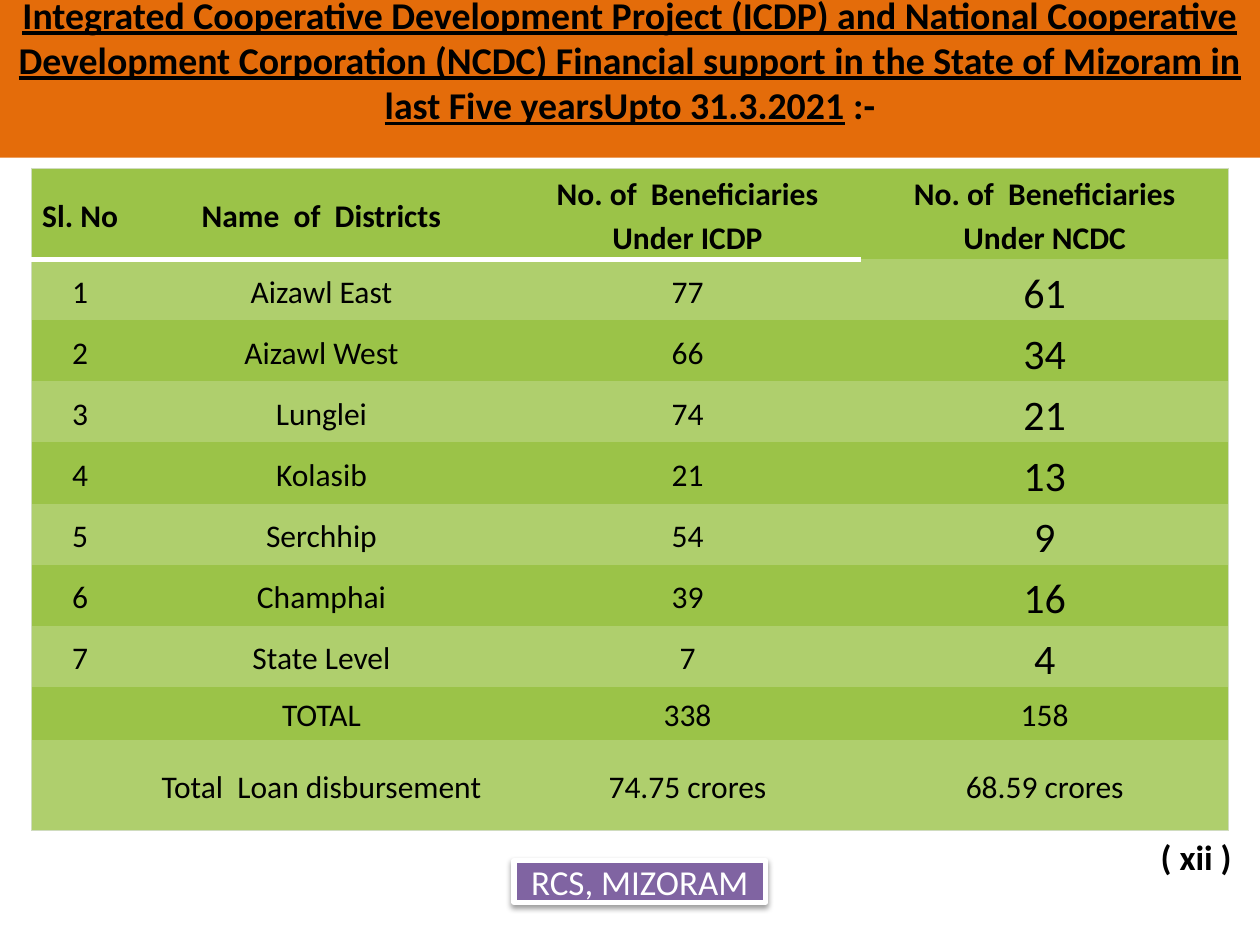
from lxml import etree
from pptx import Presentation
from pptx.dml.color import RGBColor
from pptx.enum.shapes import MSO_SHAPE
from pptx.enum.text import MSO_ANCHOR, MSO_AUTO_SIZE, PP_ALIGN
from pptx.oxml import parse_xml
from pptx.oxml.ns import nsdecls, qn
from pptx.util import Cm, Pt

MIDDLE = MSO_ANCHOR.MIDDLE
CENTER = PP_ALIGN.CENTER
RECTANGLE = MSO_SHAPE.RECTANGLE
NO_AUTOFIT = MSO_AUTO_SIZE.NONE

FONT = "Calibri"
BLACK, WHITE = "000000", "FFFFFF"
ORANGE, PURPLE = "E46C0A", "8064A2"
GREEN, LIGHT_GREEN, EDGE = "9BC348", "AFCF6D", "D0DCBF"
NO_STYLE = "{2D5ABB26-0587-4C30-8999-92F81FD0307C}"


def style_runs(para, size, color=BLACK, bold=False):
    for span in para.runs:
        span.font.name = FONT
        span.font.size = Pt(size)
        span.font.bold = bold
        span.font.color.rgb = RGBColor.from_string(color)


def add_border(cell, side, color, width):
    """Side is L, R, T or B, added in that order and before the fill."""
    line = etree.SubElement(cell._tc.get_or_add_tcPr(), qn(f"a:ln{side}"), w=str(Pt(width)))
    fill = etree.SubElement(line, qn("a:solidFill"))
    etree.SubElement(fill, qn("a:srgbClr"), val=color)


deck = Presentation()
deck.slide_width, deck.slide_height = Cm(25.4), Cm(19.05)
page = deck.slides.add_slide(deck.slide_layouts[5])

# Title band
title = page.shapes.title
title.left, title.top, title.width, title.height = Cm(0), Cm(0), Cm(25.4), Cm(3.18)
title.fill.solid()
title.fill.fore_color.rgb = RGBColor.from_string(ORANGE)
frame = title.text_frame
frame.auto_size = NO_AUTOFIT
frame.vertical_anchor = MIDDLE
frame.margin_left = frame.margin_right = Cm(0.25)
frame.margin_top, frame.margin_bottom = Cm(0), Cm(0.79)
para = frame.paragraphs[0]
para.alignment = CENTER
heading = para.add_run()
heading.text = (
    "Integrated Cooperative Development Project (ICDP) and National Cooperative "
    "Development Corporation (NCDC) Financial support in the State of Mizoram in "
    "last Five yearsUpto 31.3.2021"
)
para.add_run().text = " :-"
style_runs(para, 21.6, bold=True)
heading.font.underline = True

# Beneficiaries by district
rows = [
    ("Sl. No", "Name  of  Districts", "No. of  Beneficiaries\nUnder ICDP",
     "No. of  Beneficiaries\nUnder NCDC"),
    ("1", "Aizawl East", "77", "61"),
    ("2", "Aizawl West", "66", "34"),
    ("3", "Lunglei", "74", "21"),
    ("4", "Kolasib", "21", "13"),
    ("5", "Serchhip", "54", "9"),
    ("6", "Champhai", "39", "16"),
    ("7", "State Level", "7", "4"),
    ("", "TOTAL", "338", "158"),
    ("", "Total  Loan disbursement", "74.75 crores", "68.59 crores"),
]
column_widths = [1.95, 7.78, 6.98, 7.42]
row_heights = [1.84] + [1.23] * 7 + [1.07, 1.84]
last_row, last_column = len(rows) - 1, len(column_widths) - 1

table = page.shapes.add_table(
    len(rows), len(column_widths), Cm(0.64), Cm(3.39),
    Cm(sum(column_widths)), Cm(sum(row_heights)),
).table
table.first_row = table.horz_banding = False
table._tbl.tblPr.find(qn("a:tableStyleId")).text = NO_STYLE
for column, width in zip(table.columns, column_widths):
    column.width = Cm(width)

for r, (values, height) in enumerate(zip(rows, row_heights)):
    table.rows[r].height = Cm(height)
    for c, value in enumerate(values):
        cell = table.cell(r, c)
        cell.margin_left = cell.margin_right = Cm(0.18)
        cell.margin_top = cell.margin_bottom = Cm(0)
        cell.vertical_anchor = MIDDLE
        cell.text_frame.text = value
        is_ncdc_count = c == last_column and 1 <= r <= 7
        for para in cell.text_frame.paragraphs:
            para.alignment = CENTER
            para.line_spacing = 1.15
            style_runs(para, 24 if is_ncdc_count else 18, bold=r == 0)

        if c == 0:
            add_border(cell, "L", EDGE, 0.75)
        if c == last_column:
            add_border(cell, "R", EDGE, 0.75)
        if r == 0:
            add_border(cell, "T", EDGE, 0.75)
        if r == 0 and c < last_column:
            add_border(cell, "B", WHITE, 3)
        if r == last_row:
            add_border(cell, "B", EDGE, 0.75)
        cell.fill.solid()
        cell.fill.fore_color.rgb = RGBColor.from_string(LIGHT_GREEN if r % 2 else GREEN)

# Footer label
label = page.shapes.add_shape(RECTANGLE, Cm(10.36), Cm(17.35), Cm(5.08), Cm(0.84))
label.fill.solid()
label.fill.fore_color.rgb = RGBColor.from_string(PURPLE)
label.line.color.rgb = RGBColor.from_string(WHITE)
label.line.width = Pt(3)
label._element.spPr.append(parse_xml(
    f'<a:effectLst {nsdecls("a")}>'
    '<a:outerShdw blurRad="40000" dist="20000" dir="5400000" rotWithShape="0">'
    '<a:srgbClr val="000000"><a:alpha val="38000"/></a:srgbClr>'
    '</a:outerShdw></a:effectLst>'
))
label.text_frame.vertical_anchor = MIDDLE
label.text_frame.text = "RCS, MIZORAM"
para = label.text_frame.paragraphs[0]
para.alignment = CENTER
style_runs(para, 20, WHITE)

# Page number
number_box = page.shapes.add_textbox(Cm(22.66), Cm(16.71), Cm(2.54), Cm(1.96))
number_box.text_frame.word_wrap = True
number_box.text_frame.margin_left = Cm(0.74)
number_box.text_frame.text = "( xii )"
style_runs(number_box.text_frame.paragraphs[0], 20, bold=True)

deck.save("out.pptx")
